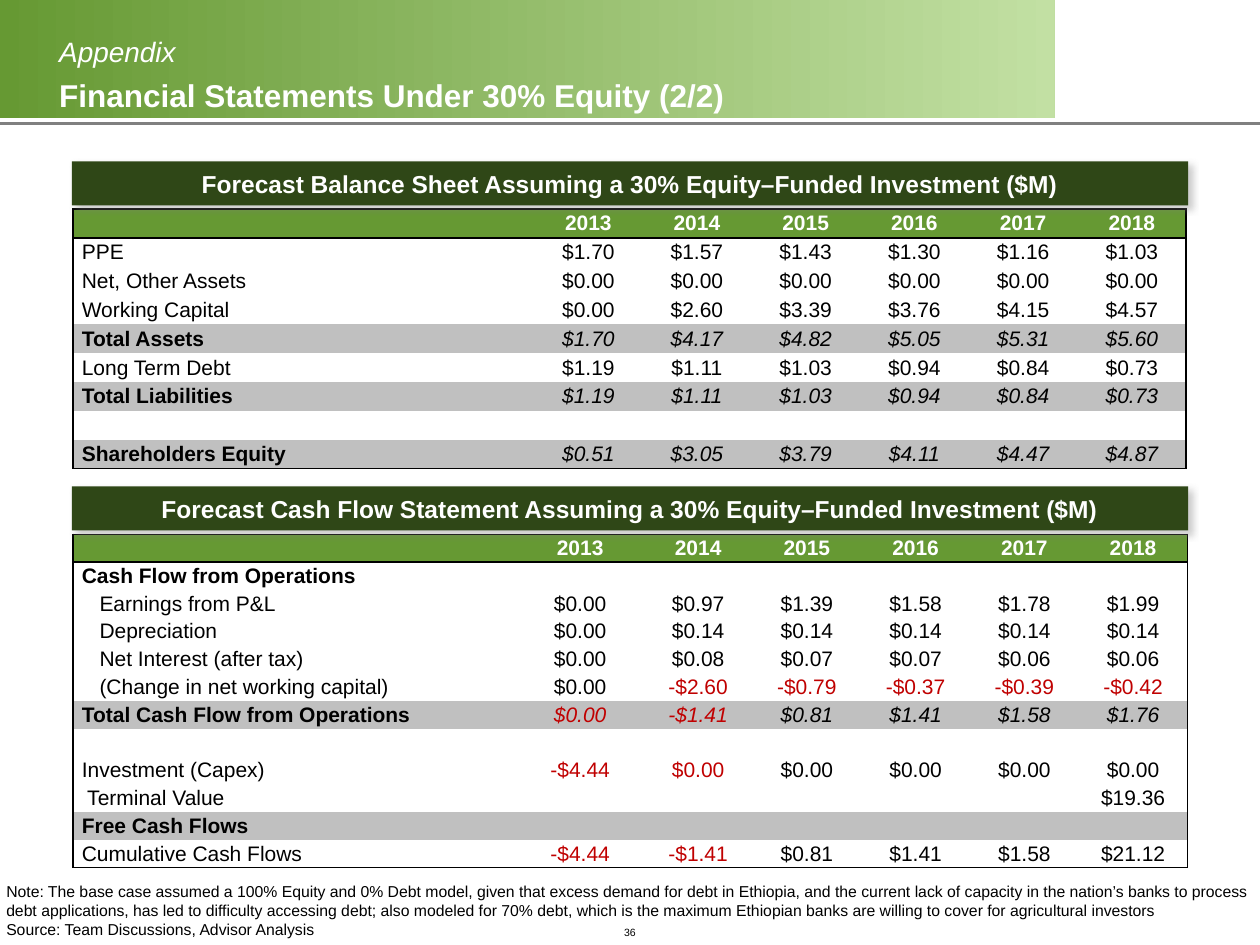
from lxml import etree
from pptx import Presentation, util as u
from pptx.dml.color import RGBColor
from pptx.enum import shapes as sh, text as tx
from pptx.oxml import ns


class Theme:
    font = "Arial"
    green, pale, dark = "669933", "C2E0A3", "2F4717"
    grey, rule, red = "C0C0C0", "808080", "C00000"
    white, black = "FFFFFF", "000000"
    lead, title, banner, cell, note, page = 16, 18, 14, 12, 9, 6


WIDE, HIGH = u.Inches(10), u.Inches(7.5)
COL, ROW = WIDE / 100, HIGH / 75


def box(left, top, wide, high):
    return [round(n) for n in (left * COL, top * ROW, wide * COL, high * ROW)]


def say(para, words, size, tone, **look):
    run = para.add_run()
    run.text = words
    look = dict(name=Theme.font, size=u.Pt(size), bold=False, italic=False) | look
    for key, val in look.items():
        setattr(run.font, key, val)
    run.font.color.rgb = RGBColor.from_string(tone)


deck = Presentation()
deck.slide_width, deck.slide_height = WIDE, HIGH
slide = deck.slides.add_slide(deck.slide_layouts[5])
items = slide.shapes
title = items.title

band = items.add_shape(sh.MSO_SHAPE.RECTANGLE, *box(0, 0, 83.7, 9.4))
band.shadow.inherit = False
band.line.fill.background()
band.fill.gradient()
band.fill.gradient_angle = 0
for stop, tone in zip(band.fill.gradient_stops, (Theme.green, Theme.pale)):
    stop.color.rgb = RGBColor.from_string(tone)

left, top, wide, _ = box(0, 9.8, 100, 0)
rule = items.add_connector(sh.MSO_CONNECTOR.STRAIGHT, left, top, wide, top)
rule.line.color.rgb = RGBColor.from_string(Theme.rule)
rule.line.width = u.Pt(2.25)
etree.SubElement(rule.element.spPr, ns.qn("a:effectLst"))

title.left, title.top, title.width, title.height = box(4.2, 0.4, 78.7, 8.6)
title.element.getparent().append(title.element)
frame = title.text_frame
look = dict(margin_left=u.Inches(0.05), margin_right=u.Inches(0.05), margin_top=0,
            margin_bottom=0, vertical_anchor=tx.MSO_ANCHOR.BOTTOM,
            auto_size=tx.MSO_AUTO_SIZE.NONE, word_wrap=True)
for key, val in look.items():
    setattr(frame, key, val)
para = frame.paragraphs[0]
para.alignment, para.line_spacing = tx.PP_ALIGN.LEFT, 1.2
say(para, "Appendix", Theme.lead, Theme.white, italic=True)
para.add_line_break()
say(para, "Financial Statements Under 30% Equity (2/2)", Theme.title, Theme.white, bold=True)

YEARS = ("top", "", "2013 2014 2015 2016 2017 2018")
SHEETS = [
    ("Forecast Balance Sheet Assuming a 30% Equity–Funded Investment ($M)",
     12.8, 16.6, 20.6, (36.6, 8.6), [
         YEARS,
         ("", "PPE", "$1.70 $1.57 $1.43 $1.30 $1.16 $1.03"),
         ("", "Net, Other Assets", "$0.00 $0.00 $0.00 $0.00 $0.00 $0.00"),
         ("", "Working Capital", "$0.00 $2.60 $3.39 $3.76 $4.15 $4.57"),
         ("sum", "Total Assets", "$1.70 $4.17 $4.82 $5.05 $5.31 $5.60"),
         ("", "Long Term Debt", "$1.19 $1.11 $1.03 $0.94 $0.84 $0.73"),
         ("sum", "Total Liabilities", "$1.19 $1.11 $1.03 $0.94 $0.84 $0.73"),
         ("", "", ""),
         ("sum", "Shareholders Equity", "$0.51 $3.05 $3.79 $4.11 $4.47 $4.87"),
     ]),
    ("Forecast Cash Flow Statement Assuming a 30% Equity–Funded Investment ($M)",
     38.6, 42.4, 26.5, (35.2, 10.1), [
         YEARS,
         ("head", "Cash Flow from Operations", ""),
         ("sub", "Earnings from P&L", "$0.00 $0.97 $1.39 $1.58 $1.78 $1.99"),
         ("sub", "Depreciation", "$0.00 $0.14 $0.14 $0.14 $0.14 $0.14"),
         ("sub", "Net Interest (after tax)", "$0.00 $0.08 $0.07 $0.07 $0.06 $0.06"),
         ("sub", "(Change in net working capital)",
          "$0.00 -$2.60 -$0.79 -$0.37 -$0.39 -$0.42"),
         ("sum", "Total Cash Flow from Operations",
          "!$0.00 -$1.41 $0.81 $1.41 $1.58 $1.76"),
         ("", "", ""),
         ("", "Investment (Capex)", "-$4.44 !$0.00 $0.00 $0.00 $0.00 $0.00"),
         ("", " Terminal Value", "$19.36"),
         ("sum", "Free Cash Flows", ""),
         ("", "Cumulative Cash Flows", "-$4.44 -$1.41 $0.81 $1.41 $1.58 $21.12"),
     ]),
]
FILLS = {"top": Theme.green, "sum": Theme.grey}

for name, head, start, tall, first, rows in SHEETS:
    cols = [*first] + [8.63] * 5
    grid = items.add_table(len(rows), 7, *box(5.8, start, sum(cols), tall)).table
    grid.first_row = grid.horz_banding = False
    for col, size in zip(grid.columns, cols):
        col.width = round(size * COL)
    for r, (kind, label, line) in enumerate(rows):
        grid.rows[r].height = round(tall * ROW / len(rows))
        vals = line.split()
        for c, word in enumerate([label] + [""] * (6 - len(vals)) + vals):
            cell = grid.cell(r, c)
            pad = 0 if c else u.Inches(0.07)
            look = dict(margin_left=pad, margin_right=pad, margin_top=0, margin_bottom=0,
                        vertical_anchor=tx.MSO_ANCHOR.MIDDLE)
            for key, val in look.items():
                setattr(cell, key, val)
            edges = dict(L=c == 0, R=c == 6, T=r < 2, B=r in (0, len(rows) - 1))
            for side, shown in edges.items():
                edge = etree.SubElement(cell._tc.get_or_add_tcPr(), ns.qn("a:ln" + side),
                                        w=str(u.Pt(1) if shown else 0))
                ink = etree.SubElement(edge, ns.qn("a:solidFill" if shown else "a:noFill"))
                if shown:
                    etree.SubElement(ink, ns.qn("a:srgbClr"), val=Theme.black)
            if kind in FILLS:
                cell.fill.solid()
                cell.fill.fore_color.rgb = RGBColor.from_string(FILLS[kind])
            else:
                cell.fill.background()
            para = cell.text_frame.paragraphs[0]
            para.alignment = tx.PP_ALIGN.CENTER if c else tx.PP_ALIGN.LEFT
            if kind == "sub" and c == 0:
                para._p.get_or_add_pPr().set("indent", str(u.Inches(0.14)))
            if not word:
                etree.SubElement(para._p, ns.qn("a:endParaRPr"), sz=str(Theme.cell * 100))
                continue
            tone = Theme.white if kind == "top" else Theme.red if word[0] in "-!" else Theme.black
            bold = kind == "top" or (c == 0 and kind in ("sum", "head"))
            say(para, word.strip("!"), Theme.cell, tone, bold=bold,
                italic=kind == "sum" and c > 0)

notes = [
    "Note: The base case assumed a 100% Equity and 0% Debt model, given that excess demand for "
    "debt in Ethiopia, and the current lack of capacity in the nation’s banks to process debt "
    "applications, has led to difficulty accessing debt; also modeled for 70% debt, which is the "
    "maximum Ethiopian banks are willing to cover for agricultural investors",
    "Source: Team Discussions, Advisor Analysis",
]
MID, END = tx.MSO_ANCHOR.MIDDLE, tx.MSO_ANCHOR.BOTTOM
LEFT, MAIN = tx.PP_ALIGN.LEFT, tx.PP_ALIGN.CENTER
blocks = [((5.7, head, 88.6, 3.5), [name], Theme.banner, Theme.white, True, MID, MAIN, True)
          for name, head, *_ in SHEETS]
blocks += [((0, 67.3, 100, 7.7), notes, Theme.note, Theme.black, False, END, LEFT, True),
           ((49, 73, 2, 2), ["36"], Theme.page, Theme.black, False, END, MAIN, False)]

for area, lines, size, tone, bold, anchor, align, wrap in blocks:
    if bold:
        item = items.add_shape(sh.MSO_SHAPE.RECTANGLE, *box(*area))
        item.shadow.inherit = False
        item.fill.solid()
        item.fill.fore_color.rgb = RGBColor.from_string(Theme.dark)
        item.line.fill.background()
        glow = etree.SubElement(item.element.spPr.find(ns.qn("a:effectLst")),
                                ns.qn("a:outerShdw"), blurRad=str(u.Pt(4)),
                                dist=str(u.Pt(3)), dir="2700000", rotWithShape="0")
        ink = etree.SubElement(glow, ns.qn("a:srgbClr"), val=Theme.rule)
        etree.SubElement(ink, ns.qn("a:alpha"), val="40000")
    else:
        item = items.add_textbox(*box(*area))
    frame = item.text_frame
    look = dict.fromkeys(["margin_left", "margin_right", "margin_top", "margin_bottom"],
                         u.Inches(0.05)) | dict(vertical_anchor=anchor, word_wrap=wrap)
    for key, val in look.items():
        setattr(frame, key, val)
    for n, words in enumerate(lines):
        para = frame.add_paragraph() if n else frame.paragraphs[0]
        para.alignment = align
        say(para, words, size, tone, bold=bold)

deck.save("out.pptx")
